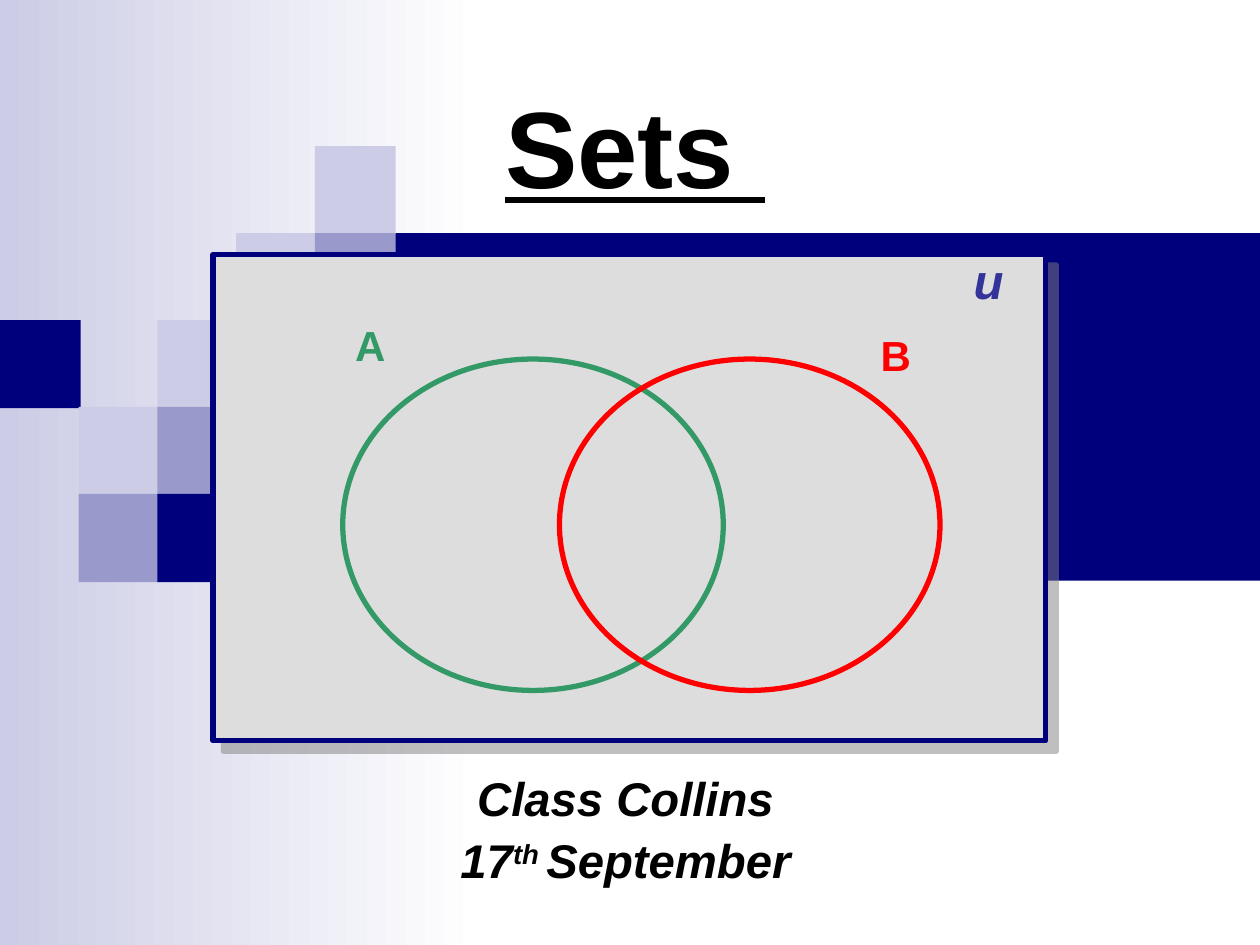
import pptx
import pptx.util
from lxml import etree
from pptx.dml.color import RGBColor
from pptx.enum.shapes import MSO_SHAPE
from pptx.enum.text import MSO_ANCHOR, PP_ALIGN
from pptx.oxml.ns import qn

NAVY = RGBColor(0x00, 0x00, 0x7D)
MID = RGBColor(0x99, 0x99, 0xCC)
PALE = RGBColor(0xCC, 0xCC, 0xE6)
WHITE = RGBColor(0xFF, 0xFF, 0xFF)
BLACK = RGBColor(0x00, 0x00, 0x00)
GREY = RGBColor(0xDD, 0xDD, 0xDD)
GREEN = RGBColor(0x33, 0x99, 0x66)
RED = RGBColor(0xFF, 0x00, 0x00)
INDIGO = RGBColor(0x33, 0x33, 0x99)

COL, ROW, GRID_TOP = 10 / 16, 0.69, 1.16
# column, row, colour of each mosaic square
SQUARES = [
    (4, 0, PALE), (3, 1, PALE), (4, 1, MID), (0, 2, NAVY), (2, 2, PALE),
    (1, 3, PALE), (2, 3, MID), (1, 4, MID), (2, 4, NAVY),
]


def inches(box):
    return [pptx.util.Inches(v) for v in box]


def add_shape(s, kind, box, fill=None, line=None):
    sp = s.shapes.add_shape(kind, *inches(box))
    sp.shadow.inherit = False
    if fill is None:
        sp.fill.background()
    else:
        sp.fill.solid()
        sp.fill.fore_color.rgb = fill
    if line is None:
        sp.line.fill.background()
    else:
        sp.line.color.rgb = line
        sp.line.width = pptx.util.Pt(3)
    return sp


def add_text(s, box, paragraphs, size, color, align=PP_ALIGN.LEFT,
             anchor=MSO_ANCHOR.TOP, spacing=None, **style):
    """Each paragraph is a list of (text, font overrides) pairs."""
    tf = s.shapes.add_textbox(*inches(box)).text_frame
    tf.word_wrap = True
    tf.vertical_anchor = anchor
    for i, runs in enumerate(paragraphs):
        p = tf.paragraphs[0] if i == 0 else tf.add_paragraph()
        for name, value in {"alignment": align, **(spacing or {})}.items():
            setattr(p, name, value)
        for text, changes in runs:
            r = p.add_run()
            r.text = text
            r.font.color.rgb = color
            font = {"name": "Arial", "size": pptx.util.Pt(size),
                    "bold": True, **style, **changes}
            for name, value in font.items():
                setattr(r.font, name, value)
    return tf


def add_drop_shadow(sp):
    effects = sp._element.spPr.find(qn("a:effectLst"))
    shadow = etree.SubElement(effects, qn("a:outerShdw"), dist="107950",
                              dir="2700000", algn="ctr", rotWithShape="0")
    color = etree.SubElement(shadow, qn("a:srgbClr"), val="808080")
    etree.SubElement(color, qn("a:alpha"), val="50000")


def add_backdrop(s):
    fade = add_shape(s, MSO_SHAPE.RECTANGLE, (0, 0, 3.83, 7.5), PALE)
    fade.fill.gradient()
    fade.fill.gradient_angle = 0
    for stop, color in zip(fade.fill.gradient_stops, (PALE, WHITE)):
        stop.color.rgb = color
    band_left = 3 * COL
    add_shape(s, MSO_SHAPE.RECTANGLE,
              (band_left, GRID_TOP + ROW, 10 - band_left, 4 * ROW), NAVY)
    for col, row, color in SQUARES:
        add_shape(s, MSO_SHAPE.RECTANGLE,
                  (col * COL, GRID_TOP + row * ROW, 0.64, 0.7), color)


def add_venn(s):
    universe = add_shape(s, MSO_SHAPE.RECTANGLE, (1.69, 2.02, 6.61, 3.86),
                         GREY, NAVY)
    add_drop_shadow(universe)
    for name, color, left, label_left, label_top in (
            ("A", GREEN, 2.72, 2.72, 2.49), ("B", RED, 4.44, 6.89, 2.57)):
        add_text(s, (label_left, label_top, 0.57, 0.53), [[(name, {})]],
                 24, color)
        add_shape(s, MSO_SHAPE.OVAL, (left, 2.85, 3.02, 2.63), line=color)
    add_text(s, (7.52, 1.94, 0.72, 0.79), [[(" u", {})]], 28, INDIGO,
             align=PP_ALIGN.JUSTIFY, italic=True)


def add_titles(s):
    add_text(s, (3.19, 0.68, 3.7, 0.94),
             [[("Sets", {}), (" ", {"bold": False})]], 62, BLACK,
             align=PP_ALIGN.CENTER, anchor=MSO_ANCHOR.MIDDLE, underline=True)
    tf = add_text(s, (3.35, 6.11, 3.23, 1.02),
                  [[("Class Collins", {})],
                   [("17", {}), ("th ", {}), ("September", {})]],
                  27, BLACK, align=PP_ALIGN.CENTER, italic=True,
                  spacing={"line_spacing": 0.9,
                           "space_before": pptx.util.Pt(6)})
    ordinal = tf.paragraphs[1].runs[1]
    ordinal.font._element.set("baseline", "30000")


def main():
    prs = pptx.Presentation()
    prs.slide_width, prs.slide_height = inches((10, 7.5))
    s = prs.slides.add_slide(prs.slide_layouts[6])
    add_backdrop(s)
    add_titles(s)
    add_venn(s)
    prs.save("out.pptx")


if __name__ == "__main__":
    main()
